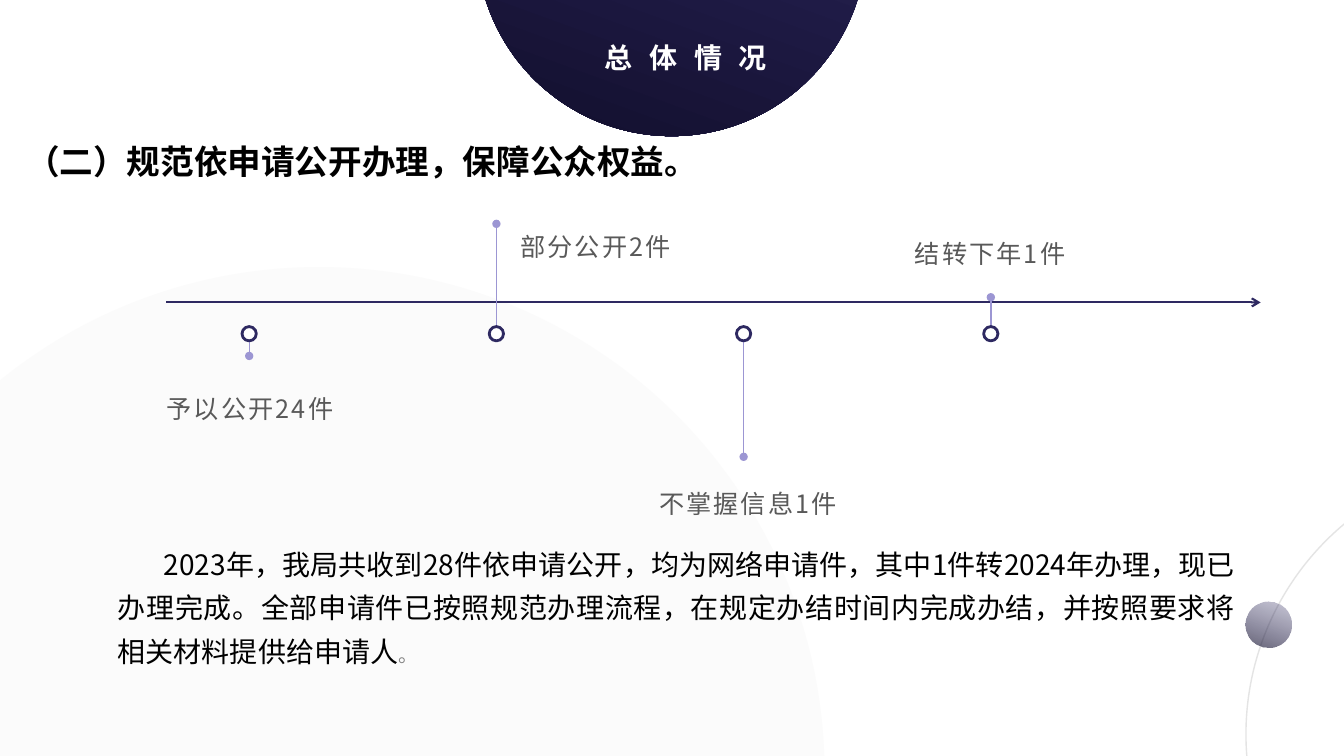
"""Build the slide on information disclosure upon application."""
from collections import namedtuple

from lxml import etree
from pptx import Presentation
from pptx.dml.color import RGBColor
from pptx.enum.shapes import MSO_CONNECTOR, MSO_SHAPE
from pptx.enum.text import MSO_ANCHOR, MSO_AUTO_SIZE, PP_ALIGN
from pptx.oxml.ns import qn
from pptx.util import Cm, Pt

FONT = "Noto Sans CJK SC"
INDIGO = RGBColor(0x2E, 0x29, 0x61)
NIGHT = RGBColor(0x12, 0x0F, 0x2D)
LAVENDER = RGBColor(0x9C, 0x96, 0xD3)
WHITE = RGBColor(0xFF, 0xFF, 0xFF)
BLACK = RGBColor(0, 0, 0)
PALE = RGBColor(0xF2, 0xF2, 0xF2)
SILVER = RGBColor(0xA6, 0xA6, 0xA6)
GRAY = RGBColor(0x80, 0x80, 0x80)
CHARCOAL = RGBColor(0x59, 0x59, 0x59)
CENTER, LEFT, JUSTIFY = PP_ALIGN.CENTER, PP_ALIGN.LEFT, PP_ALIGN.JUSTIFY
TOP, BOTTOM = MSO_ANCHOR.TOP, MSO_ANCHOR.BOTTOM
NO_AUTOFIT = MSO_AUTO_SIZE.NONE
OVAL, STRAIGHT = MSO_SHAPE.OVAL, MSO_CONNECTOR.STRAIGHT

Box = namedtuple("Box", "left top width height")
Event = namedtuple("Event", "text tip label_left label_top label_height anchor")
EVENTS = [
    Event("予以公开24件", 5.97, -0.89, 6.68, 2.16, TOP),
    Event("部分公开2件", 2.64, 7.82, 1.17, 2.41, BOTTOM),
    Event("不掌握信息1件", 8.51, 11.66, 9.07, 2.16, TOP),
    Event("结转下年1件", 4.49, 17.76, 1.37, 2.41, BOTTOM),
]
SUMMARY = (
    "2023年，我局共收到28件依申请公开，均为网络申请件，其中1件转2024年办理，"
    "现已办理完成。全部申请件已按照规范办理流程，在规定办结时间内完成办结，"
    "并按照要求将相关材料提供给申请人"
)


def in_cm(box):
    """Return the four lengths of a box as Cm values."""
    return [Cm(length) for length in box]


def set_alpha(element, percents):
    """Give the colours below an element their opacity, in order."""
    for color, percent in zip(element.iter(qn("a:srgbClr")), percents):
        etree.SubElement(color, qn("a:alpha")).set("val", str(percent * 1000))


def add_span(para, text, size, color, bold=False, spacing=0):
    """Add a run of formatted text to a paragraph."""
    span = para.add_run()
    span.text = text
    span.font.size, span.font.bold = Pt(size), bold
    span.font.color.rgb = color
    span.font.name = FONT
    properties = span.font._element
    properties.set("spc", str(int(spacing * 100)))
    etree.SubElement(properties, qn("a:ea")).set("typeface", FONT)


def write_text(shape, text, align=LEFT, anchor=TOP, inset=0.0, leading=1.0, **span_format):
    """Fill a shape with one formatted paragraph and return it."""
    frame = shape.text_frame
    frame.word_wrap, frame.auto_size = True, NO_AUTOFIT
    frame.vertical_anchor = anchor
    frame.margin_left = frame.margin_right = Cm(inset)
    frame.margin_top = frame.margin_bottom = Cm(inset / 2)
    para = frame.paragraphs[0]
    para.alignment, para.line_spacing = align, leading
    add_span(para, text, **span_format)
    return para


def add_circle(slide, box, fill=None, gradient=None, line=None, width=1):
    """Add a circle with a plain, gradient or empty fill."""
    circle = slide.shapes.add_shape(OVAL, *in_cm(box))
    circle.shadow.inherit = False
    if gradient:
        circle.fill.gradient()
        circle.fill.gradient_angle = 250
        for stop, color in zip(circle.fill.gradient_stops, gradient):
            stop.color.rgb = color
    elif fill is not None:
        circle.fill.solid()
        circle.fill.fore_color.rgb = fill
    else:
        circle.fill.background()
    if line is None:
        circle.line.fill.background()
    else:
        circle.line.color.rgb = line
        circle.line.width = Pt(width)
    return circle


def add_line(slide, start, end, color, width, head=None, tail=None):
    """Add a straight line with optional ends."""
    points = [Cm(length) for length in (*start, *end)]
    connector = slide.shapes.add_connector(STRAIGHT, *points)
    connector.line.color.rgb = color
    connector.line.width = Pt(width)
    line_element = connector.line._get_or_add_ln()
    for tag, kind in (("a:headEnd", head), ("a:tailEnd", tail)):
        if kind:
            etree.SubElement(line_element, qn(tag)).set("type", kind)
    etree.SubElement(connector._element.spPr, qn("a:effectLst"))


def add_backdrop(slide, page):
    """Place the pale disc and the ring with its bead on the page."""
    ring_left = page.left + 31.4
    ring = add_circle(slide, Box(ring_left, page.top + 11.6, 13.8, 13.8), line=SILVER)
    set_alpha(ring._element.spPr, [30])
    bead = add_circle(slide, Box(ring_left, page.top + 15.17, 1.15, 1.15),
                      gradient=(INDIGO, NIGHT))
    set_alpha(bead._element.spPr, [26, 65])
    disc = add_circle(slide, Box(page.left - 4.7, page.top + 6.73, 25.48, 25.48), fill=PALE)
    set_alpha(disc._element.spPr, [29])


def add_banner(slide, box):
    """Place the dark circle and the chapter name in it."""
    add_circle(slide, box, gradient=(INDIGO, NIGHT))
    name_box = Box(box.left - 0.28, box.top + 7.42, 11.1, 1.3)
    write_text(slide.shapes.add_textbox(*in_cm(name_box)), "总体情况", align=CENTER,
               size=20, color=WHITE, bold=True, spacing=12)


def add_heading(slide, box):
    """Place the section heading in the title placeholder."""
    title = slide.shapes.title
    title.left, title.top, title.width, title.height = in_cm(box)
    write_text(title, "（二）规范依申请公开办理，保障公众权益。", inset=0.25,
               size=24, color=BLACK, bold=True)


def add_timeline(slide, box):
    """Place the axis and the evenly spaced events around it."""
    axis_y, marker_y = box.top + 4.62, box.top + 5.41
    first, step, diameter = box.left + 2.09, 6.23, 0.36
    add_line(slide, (box.left, axis_y), (box.left + box.width, axis_y), INDIGO, 1.5,
             tail="arrow")
    for index, event in enumerate(EVENTS):
        x = first + index * step
        add_line(slide, (x, box.top + event.tip), (x, marker_y), LAVENDER, 1, head="oval")
        add_circle(slide, Box(x - diameter / 2, marker_y - diameter / 2, diameter, diameter),
                   fill=WHITE, line=INDIGO, width=2)
        label_box = Box(box.left + event.label_left, box.top + event.label_top,
                        6, event.label_height)
        write_text(slide.shapes.add_textbox(*in_cm(label_box)), event.text, align=CENTER,
                   anchor=event.anchor, leading=1.3, size=18, color=CHARCOAL, spacing=1.5)


def add_summary(slide, box):
    """Place the justified paragraph with its first line indented."""
    para = write_text(slide.shapes.add_textbox(*in_cm(box)), SUMMARY, align=JUSTIFY,
                      inset=0.25, leading=1.3, size=20, color=BLACK)
    para._p.get_or_add_pPr().set("indent", str(Cm(1.16)))
    add_span(para, "。", size=14, color=GRAY)


def main():
    """Build and save the deck."""
    deck = Presentation()
    page = Box(0, 0, 33.87, 19.05)
    deck.slide_width, deck.slide_height = Cm(page.width), Cm(page.height)
    slide = deck.slides.add_slide(deck.slide_layouts[5])
    add_heading(slide, Box(0.41, 3.43, 17.88, 1.27))
    add_banner(slide, Box(12.01, -6.4, 9.83, 9.83))
    add_backdrop(slide, page)
    add_summary(slide, Box(2.72, 13.41, 28.65, 3.58))
    add_timeline(slide, Box(4.19, 3, 27.58, 11.2))
    deck.save("out.pptx")


if __name__ == "__main__":
    main()
